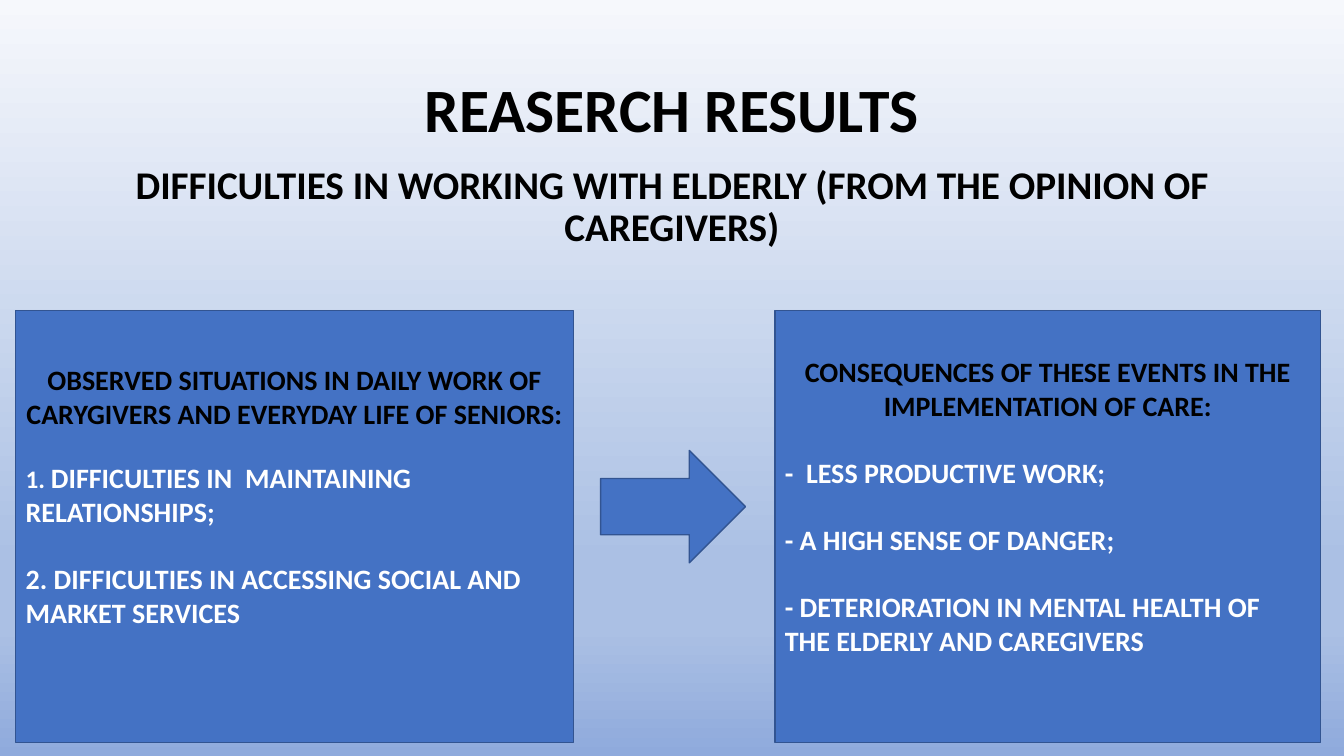
from dataclasses import dataclass

from lxml.etree import SubElement
from pptx import Presentation
from pptx.dml.color import RGBColor
from pptx.enum.shapes import MSO_SHAPE
from pptx.enum.text import MSO_ANCHOR, MSO_AUTO_SIZE, PP_ALIGN
from pptx.oxml.ns import qn
from pptx.shapes.autoshape import Shape
from pptx.slide import Slide
from pptx.text.text import _Paragraph as Para
from pptx.util import Emu, Pt

PX = 9525  # EMU in one px, at 96 px to the inch
COLORS = {"black": "000000", "white": "FFFFFF", "fill": "4472C4", "line": "325491"}
STOPS = [(0, "F6F8FC"), (74, "ABC0E4"), (83, "ABC0E4"), (100, "8FAADC"), (100, "C7D5ED")]


@dataclass(frozen=True)
class Box:
    left: int
    top: int
    width: int
    height: int


@dataclass(frozen=True)
class Panel:
    box: Box
    head: str
    items: list[list[tuple[str, int]]]  # each item is a list of (text, size) runs
    gap: int  # points between head and first item
    foot: int  # px kept free below the text


PANELS = [
    Panel(
        Box(15, 296, 531, 411),
        "OBSERVED SITUATIONS IN DAILY WORK OF CARYGIVERS AND EVERYDAY LIFE OF SENIORS:",
        [
            [("1. ", 18), ("DIFFICULTIES IN  MAINTAINING RELATIONSHIPS;", 20)],
            [("2. DIFFICULTIES IN ACCESSING SOCIAL AND MARKET SERVICES", 20)],
        ],
        gap=22,
        foot=63,
    ),
    Panel(
        Box(738, 296, 520, 411),
        "CONSEQUENCES OF THESE EVENTS IN THE IMPLEMENTATION OF CARE:",
        [
            [("-  LESS PRODUCTIVE WORK;", 20)],
            [("- A HIGH SENSE OF DANGER;", 20)],
            [("- DETERIORATION IN MENTAL HEALTH OF THE ELDERLY AND CAREGIVERS", 20)],
        ],
        gap=24,
        foot=44,
    ),
]


def px(count: int) -> Emu:
    return Emu(count * PX)


def place(shape: Shape, box: Box) -> None:
    shape.left, shape.top = px(box.left), px(box.top)
    shape.width, shape.height = px(box.width), px(box.height)


def style(para: Para, color: str, align: PP_ALIGN, size: int | None = None) -> None:
    para.alignment = align
    font = para.font
    font.name, font.bold = "Calibri", True
    font.color.rgb = RGBColor.from_string(COLORS[color])
    if size:
        font.size = Pt(size)


def paint(slide: Slide) -> None:
    """Give the slide its vertical gradient."""
    fill = slide.background.fill
    fill.gradient()
    fill.gradient_angle = 270
    stops = next(slide.element.iter(qn("a:gsLst")))
    for stop in list(stops):
        stops.remove(stop)
    for share, color in STOPS:
        stop = SubElement(stops, qn("a:gs"), pos=str(share * 1000))
        SubElement(stop, qn("a:srgbClr"), val=color)


def fill_holder(holder: Shape, box: Box, text: str, size: int, anchor: MSO_ANCHOR) -> Para:
    place(holder, box)
    frame = holder.text_frame
    frame.text = text
    frame.word_wrap = True
    frame.auto_size = MSO_AUTO_SIZE.NONE
    frame.vertical_anchor = anchor
    para = frame.paragraphs[0]
    style(para, "black", PP_ALIGN.CENTER, size)
    para.line_spacing = 0.9
    return para


def add_block(slide: Slide, kind: MSO_SHAPE, box: Box) -> Shape:
    shape = slide.shapes.add_shape(kind, 0, 0, 0, 0)
    place(shape, box)
    shape.shadow.inherit = False
    shape.fill.solid()
    shape.fill.fore_color.rgb = RGBColor.from_string(COLORS["fill"])
    shape.line.color.rgb = RGBColor.from_string(COLORS["line"])
    shape.line.width = Pt(1)
    return shape


def add_panel(slide: Slide, panel: Panel) -> None:
    frame = add_block(slide, MSO_SHAPE.RECTANGLE, panel.box).text_frame
    frame.word_wrap = True
    frame.vertical_anchor = MSO_ANCHOR.MIDDLE
    frame.margin_bottom = px(panel.foot)
    head = frame.paragraphs[0]
    head.text = panel.head
    style(head, "black", PP_ALIGN.CENTER, 20)
    for order, runs in enumerate(panel.items):
        item = frame.add_paragraph()
        style(item, "white", PP_ALIGN.LEFT)
        item.space_before = Pt(24 if order else panel.gap)
        for text, size in runs:
            run = item.add_run()
            run.text = text
            run.font.size = Pt(size)


def main() -> None:
    deck = Presentation()
    deck.slide_width, deck.slide_height = px(1280), px(720)
    slide = deck.slides.add_slide(deck.slide_layouts[1])
    paint(slide)

    title, body = slide.placeholders
    fill_holder(title, Box(88, 38, 1104, 139), "REASERCH RESULTS", 44, MSO_ANCHOR.MIDDLE)
    lead = fill_holder(
        body,
        Box(88, 153, 1104, 496),
        "DIFFICULTIES IN WORKING WITH ELDERLY (FROM THE OPINION OF CAREGIVERS)",
        28,
        MSO_ANCHOR.TOP,
    )
    lead.space_before = Pt(10)
    props = lead._p.get_or_add_pPr()
    props.set("marL", "0")
    props.set("indent", "0")
    props.find(qn("a:spcBef")).addnext(SubElement(props, qn("a:buNone")))

    for panel in PANELS:
        add_panel(slide, panel)
    add_block(slide, MSO_SHAPE.RIGHT_ARROW, Box(572, 429, 138, 107))
    deck.save("out.pptx")


if __name__ == "__main__":
    main()
